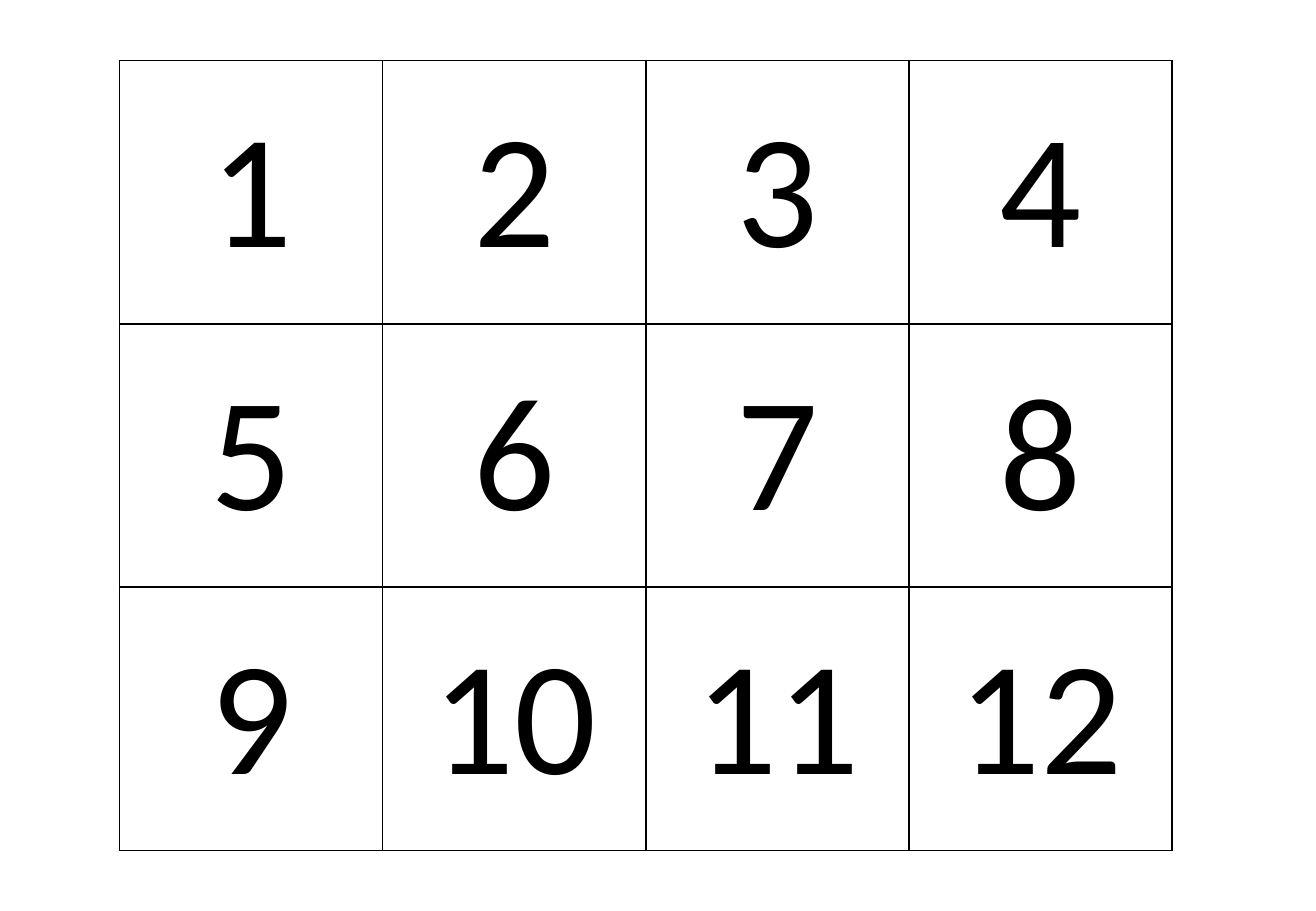
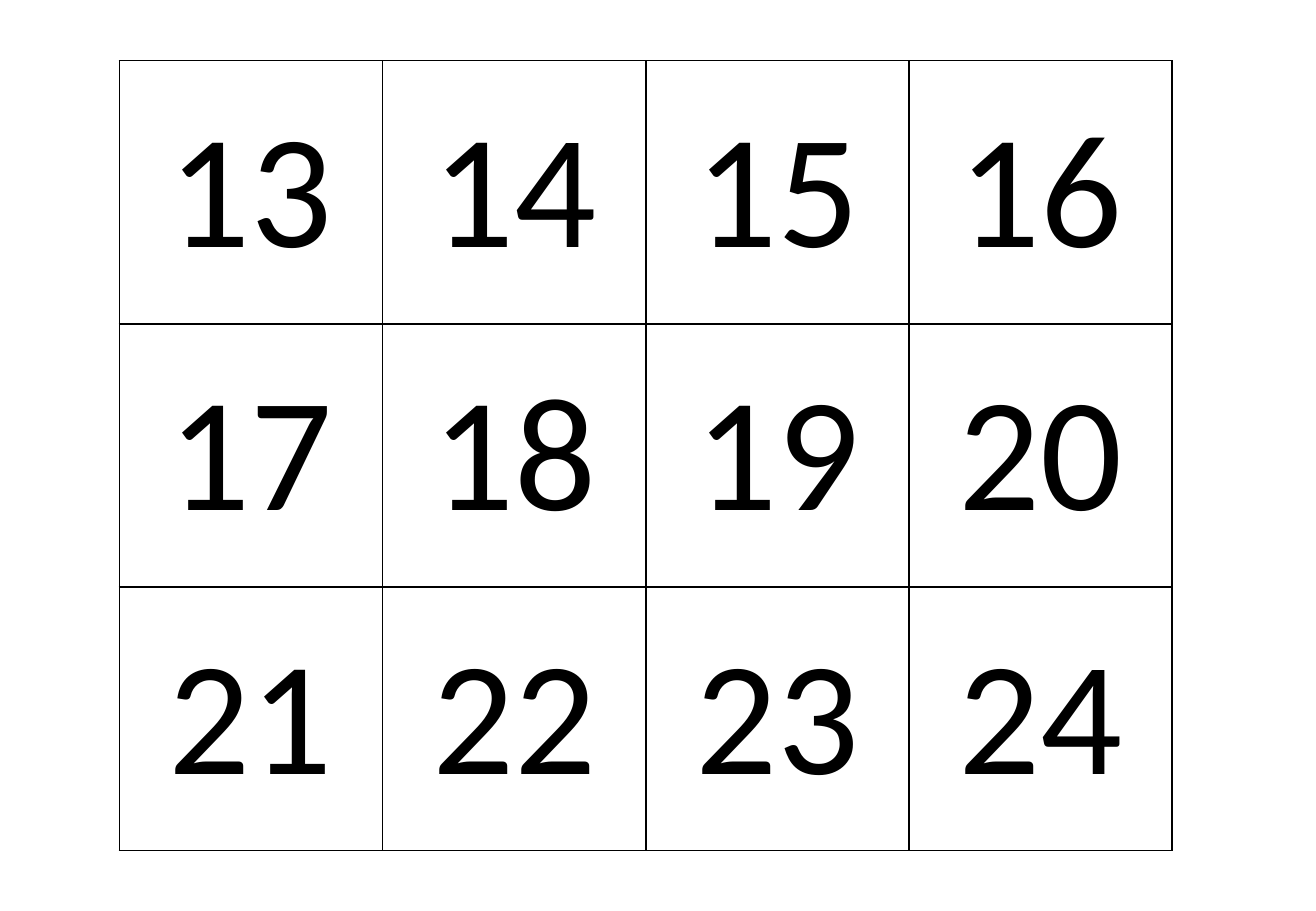
from lxml.etree import SubElement
from pptx import Presentation
from pptx.dml.color import RGBColor
from pptx.enum.text import MSO_ANCHOR, PP_ALIGN
from pptx.oxml.ns import qn
from pptx.util import Pt

PX = 7620  # EMU, 120 px to the inch
SLIDE_WIDTH, SLIDE_HEIGHT = 1300, 900
COLUMNS, ROWS = 4, 3
CARD_SIZE = 260
GRID_LEFT, GRID_TOP = 118, 60
BLANK_LAYOUT = 6
FONT = "Calibri"
COLORS = {"card": "FFFFFF", "ink": "000000"}


def px(length):
    return length * PX


def draw_borders(cell):
    properties = cell._tc.get_or_add_tcPr()
    for side in ("a:lnL", "a:lnR", "a:lnT", "a:lnB"):
        line = SubElement(properties, qn(side), w=str(Pt(1)))
        fill = SubElement(line, qn("a:solidFill"))
        SubElement(fill, qn("a:srgbClr"), val=COLORS["ink"])


def fill_card(cell, number):
    draw_borders(cell)
    cell.fill.solid()
    cell.fill.fore_color.rgb = RGBColor.from_string(COLORS["card"])
    cell.vertical_anchor = MSO_ANCHOR.MIDDLE
    cell.text = str(number)
    para = cell.text_frame.paragraphs[0]
    para.alignment = PP_ALIGN.CENTER
    font = para.runs[0].font
    font.name = FONT
    font.size = Pt(96)
    font.bold = False
    font.color.rgb = RGBColor.from_string(COLORS["ink"])


def add_card_page(deck, first_number):
    """Add a slide whose cards count up from first_number, row by row."""
    page = deck.slides.add_slide(deck.slide_layouts[BLANK_LAYOUT])
    table = page.shapes.add_table(
        ROWS, COLUMNS, px(GRID_LEFT), px(GRID_TOP),
        px(COLUMNS * CARD_SIZE), px(ROWS * CARD_SIZE),
    ).table
    table.first_row = False
    table.horz_banding = False
    for number, cell in enumerate(table.iter_cells(), first_number):
        fill_card(cell, number)


def main():
    deck = Presentation()
    deck.slide_width = px(SLIDE_WIDTH)
    deck.slide_height = px(SLIDE_HEIGHT)
    for first_number in (1, 1 + ROWS * COLUMNS):
        add_card_page(deck, first_number)
    deck.save("out.pptx")


if __name__ == "__main__":
    main()
